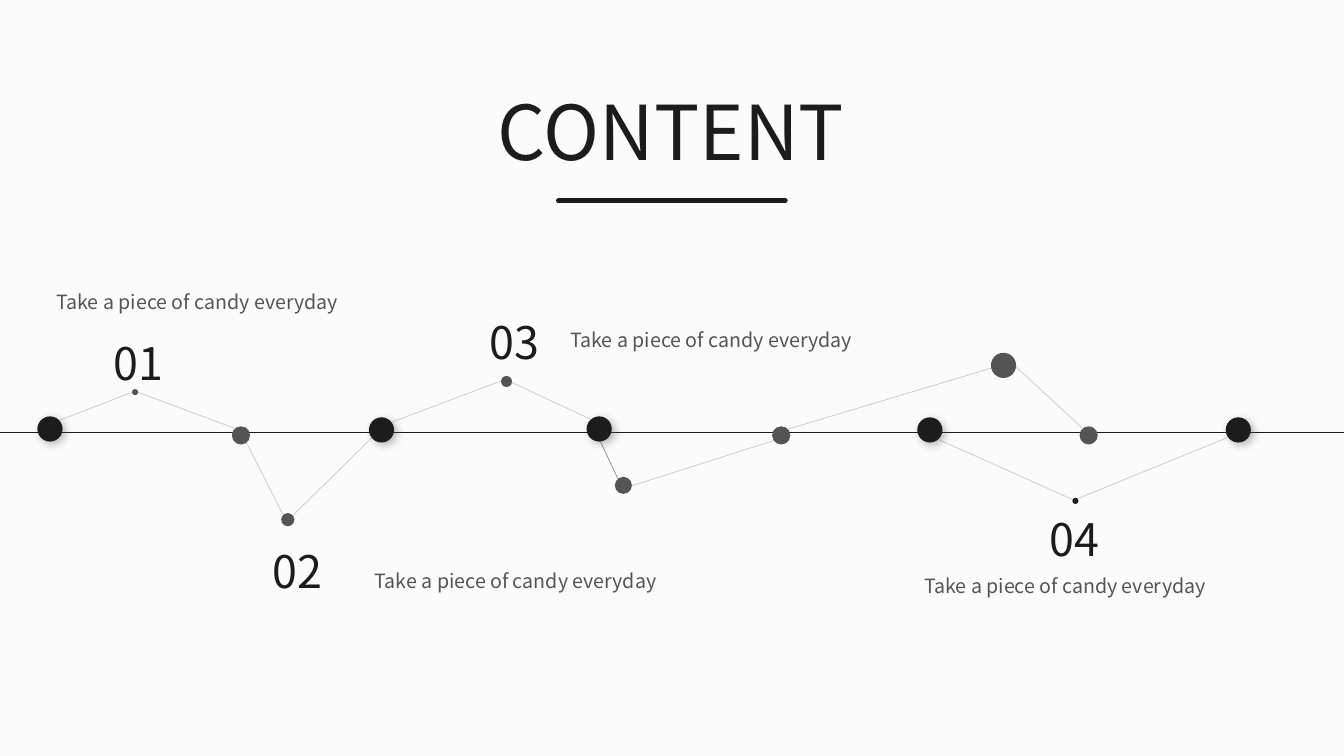
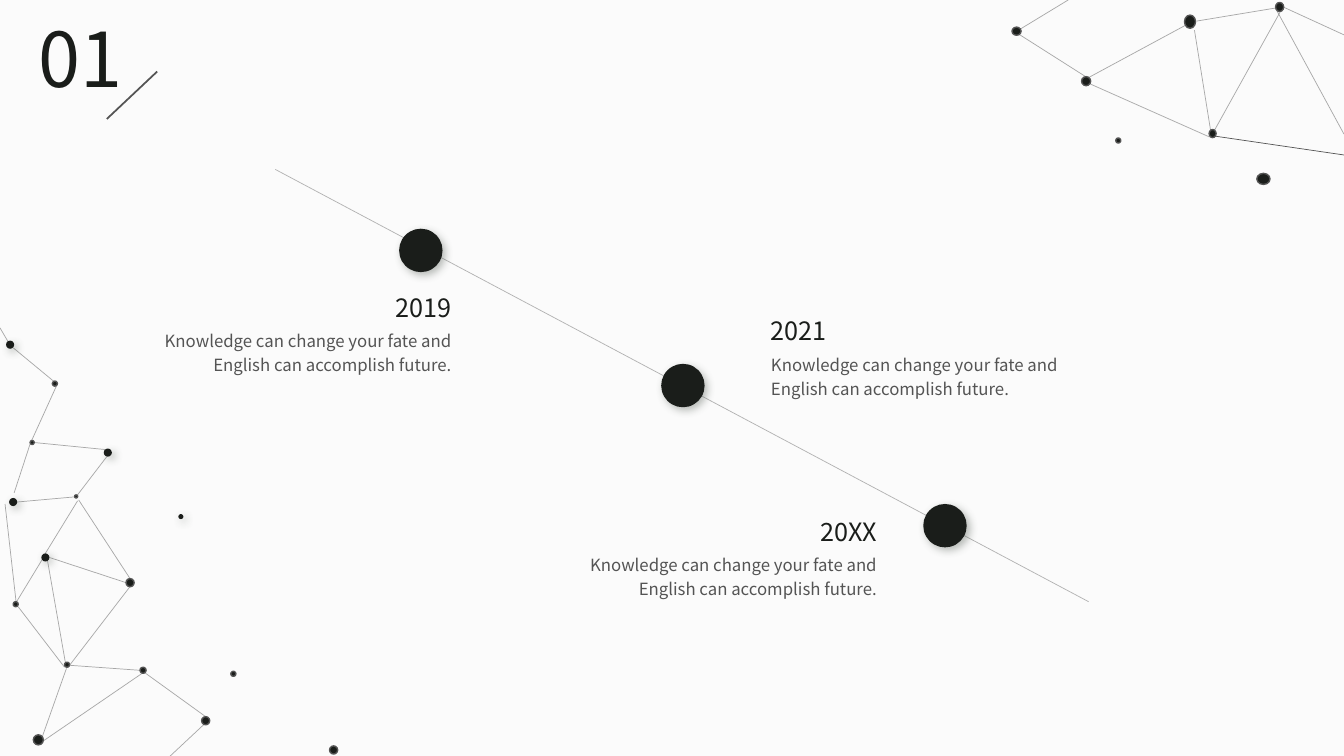
from dataclasses import dataclass
from typing import Any

from lxml import etree
from pptx import Presentation
from pptx import util as u
from pptx.dml.color import RGBColor
from pptx.enum import shapes, text
from pptx.oxml import ns

# Shared look
WIDTH, HEIGHT = 960, 540
FONT = "Noto Sans CJK SC"
COLORS = {"paper": "FBFBFB", "ink": "1A1D1A", "grey": "545454", "shade": "505950"}
LEFT, CENTER, RIGHT = text.PP_ALIGN.LEFT, text.PP_ALIGN.CENTER, text.PP_ALIGN.RIGHT
FRAME = {"word_wrap": True, "auto_size": text.MSO_AUTO_SIZE.NONE,
         "vertical_anchor": text.MSO_ANCHOR.TOP}


@dataclass(frozen=True)
class TextStyle:
    size: float
    color: str = "ink"
    align: Any = LEFT
    spacing: float = 1.0


@dataclass(frozen=True)
class LineStyle:
    color: str
    width: float
    opacity: int = 100
    round_cap: bool = False


@dataclass(frozen=True)
class DotStyle:
    fill: str = "ink"
    outlined: bool = False
    shadow: bool = False


@dataclass(frozen=True)
class Line:
    x1: float
    y1: float
    x2: float
    y2: float


@dataclass(frozen=True)
class Dot:
    """An ellipse by its centre; a dot without a height is round."""
    x: float
    y: float
    w: float
    h: float = 0


@dataclass(frozen=True)
class Topic:
    number: str
    number_at: tuple[float, float]
    caption_at: tuple[float, float]


@dataclass(frozen=True)
class Milestone:
    year: str
    x: float
    y: float
    align: Any


TITLE = TextStyle(54)
THIN = LineStyle("ink", 0.5, 21)
WEB = LineStyle("grey", 0.5, 50)
GREY, DARK = DotStyle("grey"), DotStyle()
RAISED, RINGED = DotStyle(shadow=True), DotStyle(outlined=True)


# Drawing functions
def rgb(name: str) -> RGBColor:
    return RGBColor.from_string(COLORS[name])


def apply(target: Any, values: dict[str, Any]) -> None:
    for name, value in values.items():
        setattr(target, name, value)


def place(sp: Any, x: float, y: float, w: float, h: float) -> None:
    apply(sp, {"left": u.Pt(x), "top": u.Pt(y), "width": u.Pt(w), "height": u.Pt(h)})


def write(sp: Any, words: str, style: TextStyle) -> None:
    tf = sp.text_frame
    apply(tf, FRAME)
    p = tf.paragraphs[0]
    apply(p, {"alignment": style.align, "line_spacing": style.spacing})
    r = p.add_run()
    r.text = words
    apply(r.font, {"name": FONT, "size": u.Pt(style.size), "bold": False})
    r.font.color.rgb = rgb(style.color)


def add_text(s: Any, words: str, x: float, y: float, w: float, h: float,
             style: TextStyle) -> None:
    sp = s.shapes.add_textbox(u.Pt(x), u.Pt(y), u.Pt(w), u.Pt(h))
    write(sp, words, style)


def add_lines(s: Any, lines: list[Line], style: LineStyle) -> None:
    for line in lines:
        ends = (u.Pt(v) for v in (line.x1, line.y1, line.x2, line.y2))
        sp = s.shapes.add_connector(shapes.MSO_CONNECTOR.STRAIGHT, *ends)
        sp.line.width = u.Pt(style.width)
        sp.line.color.rgb = rgb(style.color)
        props = sp._element.spPr
        if style.opacity < 100:
            color = props.find(".//" + ns.qn("a:srgbClr"))
            etree.SubElement(color, ns.qn("a:alpha"), val=str(style.opacity * 1000))
        if style.round_cap:
            props.find(ns.qn("a:ln")).set("cap", "rnd")
        etree.SubElement(props, ns.qn("a:effectLst"))


def add_shadow(sp: Any) -> None:
    effects = sp._element.spPr.find(ns.qn("a:effectLst"))
    outer = etree.SubElement(effects, ns.qn("a:outerShdw"), blurRad=str(u.Pt(6)),
                             dist=str(u.Pt(3)), dir=str(45 * 60000), algn="ctr",
                             rotWithShape="0")
    color = etree.SubElement(outer, ns.qn("a:srgbClr"), val=COLORS["shade"])
    etree.SubElement(color, ns.qn("a:alpha"), val="40000")


def add_dots(s: Any, dots: list[Dot], style: DotStyle) -> None:
    for dot in dots:
        w, h = dot.w, dot.h or dot.w
        sp = s.shapes.add_shape(shapes.MSO_SHAPE.OVAL, u.Pt(dot.x - w / 2),
                                u.Pt(dot.y - h / 2), u.Pt(w), u.Pt(h))
        sp.fill.solid()
        sp.fill.fore_color.rgb = rgb(style.fill)
        if style.outlined:
            sp.line.color.rgb = rgb("grey")
            sp.line.width = u.Pt(1)
        else:
            sp.line.fill.background()
        sp.shadow.inherit = False
        if style.shadow:
            add_shadow(sp)


def add_slide(prs: Any, title: str, x: float, y: float, w: float) -> Any:
    s = prs.slides.add_slide(prs.slide_layouts[5])
    place(s.shapes.title, x, y, w, 72.7)
    write(s.shapes.title, title, TITLE)
    return s


# Contents slide
CAPTION = "Take a piece of candy everyday"
TOPICS = [
    Topic("01", (29.5, 236.2), (33.1, 203.8)),
    Topic("02", (143.3, 384.5), (260.6, 402.5)),
    Topic("03", (298.1, 221), (400.3, 230.4)),
    Topic("04", (697.7, 362.2), (653, 406.1)),
]
PATH_LINES = [
    Line(42.5, 300.2, 96.5, 279.4),
    Line(96.5, 279.4, 167.8, 306),
    Line(175.7, 315.4, 202.3, 367.9),
    Line(208.8, 368.6, 265.7, 312.5),
    Line(279.4, 301.7, 357.8, 272.2),
    Line(421.9, 299.5, 365, 272.9),
    Line(553, 314.6, 451.4, 347),
    Line(708.5, 262.8, 562.3, 306.7),
    Line(773.3, 306, 725.8, 262.1),
    Line(766.8, 357.1, 670.3, 313.9),
    Line(877, 312.5, 767.5, 357.1),
]
AXIS_DOTS = [Dot(35.7, 306.4, 18), Dot(272.5, 307.1, 18), Dot(428, 306.4, 18),
             Dot(664.2, 307.1, 18), Dot(884.5, 307.1, 18)]
PATH_DOTS = [Dot(x, 311, 13) for x in (172.1, 558, 777.6)] + [
    Dot(96.5, 280.1, 4.3), Dot(205.6, 371.2, 9.4), Dot(361.8, 272.5, 7.9),
    Dot(445.3, 346.7, 12.2), Dot(716.8, 261, 18)]


def contents_slide(prs: Any) -> None:
    s = add_slide(prs, "CONTENT", 348.5, 56.9, 275.8)
    add_lines(s, [Line(398.9, 143.3, 560.9, 143.3)],
              LineStyle("ink", 3.5, round_cap=True))
    add_lines(s, [Line(0, 308.9, WIDTH, 308.9)], LineStyle("ink", 0.75))
    add_lines(s, PATH_LINES, THIN)
    add_lines(s, [Line(425.5, 308.2, 441.4, 342)], LineStyle("ink", 0.5, 51))
    add_dots(s, AXIS_DOTS, RAISED)
    add_dots(s, PATH_DOTS, GREY)
    add_dots(s, [Dot(768.2, 357.8, 4.3)], DARK)
    for topic in TOPICS:
        add_text(s, topic.number, *topic.number_at, 139, 46, TextStyle(32, align=CENTER))
        add_text(s, CAPTION, *topic.caption_at, 224, 24.5, TextStyle(14, "grey"))


# Timeline slide
BODY = "Knowledge can change your fate and English can accomplish future."
MILESTONES = [
    Milestone("2019", 77, 205.2, RIGHT),
    Milestone("2021", 543.6, 221.8, LEFT),
    Milestone("20XX", 380.9, 365, RIGHT),
]
TIMELINE_DOTS = [Dot(300.6 + 187.2 * i, y, 31)
                 for i, y in enumerate((178.9, 275.4, 375.5))]
WEB_LINES = [
    # Top right corner
    Line(854.6, 15.1, 910.8, 5.8),
    Line(WIDTH, 24.9, 916.6, 5),
    Line(WIDTH, 95.8, 912.2, 7.9),
    Line(914.4, 8.6, 867.6, 92.9),
    Line(864.7, 92.9, 853.2, 21.6),
    Line(777.6, 55.4, 851, 15.8),
    Line(778.3, 59.8, 864, 97.9),
    Line(727.9, 24.5, 775.4, 54.7),
    Line(728.6, 20.9, 763, 0),
    # Left edge
    Line(0, 234.2, 5.8, 244.1),
    Line(9.4, 248.4, 38.2, 272.2),
    Line(40.3, 275.8, 22.3, 315.4),
    Line(24.5, 316.1, 74.9, 321.1),
    Line(21.6, 316.8, 10.1, 352.1),
    Line(12.2, 358.6, 52.6, 355),
    Line(55.4, 353.5, 76.3, 326.2),
    Line(32.4, 395.3, 55.4, 357.8),
    Line(3.6, 360, 11.5, 429.8),
    Line(30.2, 399.6, 10.1, 432.7),
    Line(33.8, 399.6, 46.8, 473.8),
    Line(92.9, 413.3, 56.2, 357.1),
    Line(35.3, 398.2, 90, 416.2),
    Line(46.1, 476.6, 13, 433.4),
    Line(92.9, 419, 49.7, 475.2),
    Line(49.7, 475.2, 100.1, 478.8),
    Line(30.2, 526.3, 47.5, 477.4),
    Line(101.5, 481, 31, 529.2),
    Line(103, 480.2, 146.9, 511.9),
    Line(146.2, 517, 121.6, HEIGHT),
]
RINGED_DOTS = [
    # Top right corner
    Dot(914, 5, 5.8, 6.5), Dot(866.2, 95.4, 5, 5.8), Dot(775.8, 58, 6.5),
    Dot(850, 15.5, 7.9, 9.4), Dot(902.5, 127.8, 9.4, 7.9),
    Dot(726.1, 22.3, 6.5, 5.8), Dot(798.8, 100.4, 3.6),
    # Left edge
    Dot(39.2, 274, 3.6), Dot(23, 316.1, 2.9), Dot(54.4, 354.6, 2.2),
    Dot(92.9, 416.2, 5.8), Dot(11.2, 431.6, 3.6), Dot(47.9, 474.8, 3.6),
    Dot(102.2, 478.8, 4.3), Dot(166.7, 481.3, 3.6), Dot(146.9, 514.8, 5.8),
    Dot(27.4, 528.5, 7.2), Dot(238.3, 535.7, 5.8),
]
RAISED_DOTS = [Dot(7.2, 246.2, 5.8), Dot(77, 323.3, 5.8), Dot(9.4, 358.6, 5.8),
               Dot(129.2, 369, 3.6), Dot(32.4, 398.2, 5.8)]


def timeline_slide(prs: Any) -> None:
    s = add_slide(prs, "01", 20.2, 5, 82.1)
    add_lines(s, [Line(112.3, 51.1, 76.3, 85)], LineStyle("grey", 1.25))
    add_lines(s, [Line(196.6, 121, 777.6, 429.8)], LineStyle("grey", 0.5, 43))
    add_dots(s, TIMELINE_DOTS, RAISED)
    add_lines(s, WEB_LINES, WEB)
    add_lines(s, [Line(WIDTH, 110.7, 867.6, 97.2)], LineStyle("grey", 0.5))
    add_dots(s, RINGED_DOTS, RINGED)
    add_dots(s, RAISED_DOTS, RAISED)
    for m in MILESTONES:
        add_text(s, m.year, m.x, m.y, 252.7, 28.8, TextStyle(18, align=m.align))
        add_text(s, BODY, m.x, m.y + 24.8, 252.7, 42.5,
                 TextStyle(12, "grey", m.align, 1.2))


def main() -> None:
    prs = Presentation()
    apply(prs, {"slide_width": u.Pt(WIDTH), "slide_height": u.Pt(HEIGHT)})
    fill = prs.slide_master.background.fill
    fill.solid()
    fill.fore_color.rgb = rgb("paper")
    contents_slide(prs)
    timeline_slide(prs)
    prs.save("out.pptx")


if __name__ == "__main__":
    main()
